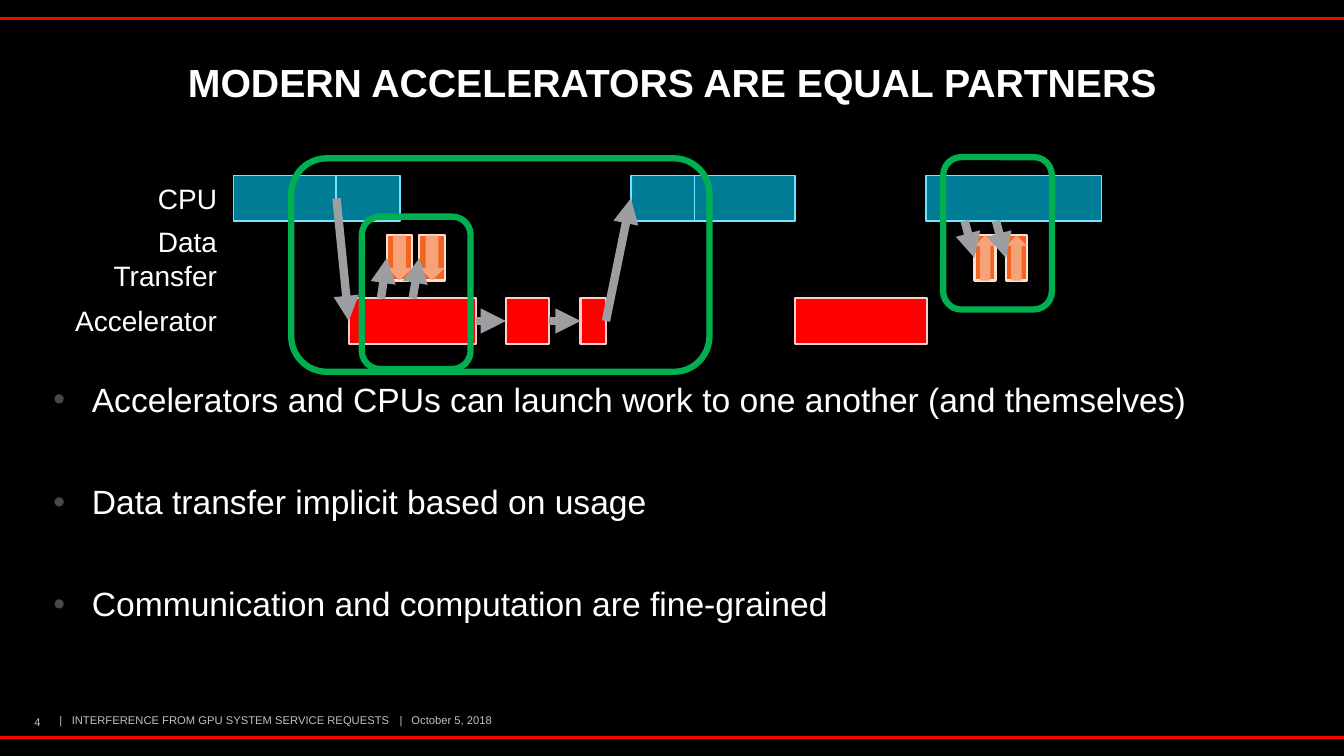
"""Builds a slide on accelerators as equal partners, with a timeline and three points."""
import dataclasses

import lxml.etree
import pptx
import pptx.dml.color
import pptx.enum.shapes
import pptx.enum.text
import pptx.oxml.ns
import pptx.util

Cm, Pt = pptx.util.Cm, pptx.util.Pt
Shape = pptx.enum.shapes.MSO_SHAPE
Align = pptx.enum.text.PP_ALIGN
Anchor = pptx.enum.text.MSO_ANCHOR


@dataclasses.dataclass(frozen=True)
class Theme:
    font: str = "Arial"
    background: str = "000000"
    text: str = "FFFFFF"
    muted: str = "C1C1C1"
    bullet: str = "484848"
    rule: str = "FF0000"
    cpu: tuple = ("007B96", "6FE5FF", 1)
    transfer: tuple = ("F16521", "FCE0D3", 1.5)
    accelerator: tuple = ("FF0000", "FFCCCC", 1.5)
    transfer_arrow: str = "F7A37A"
    launch: str = "9C9EA2"
    highlight: str = "00B050"
    title_size: int = 28
    body_size: int = 24
    label_size: int = 20
    footer_size: int = 8


THEME = Theme()
SLIDE_WIDTH, SLIDE_HEIGHT = 33.87, 19.05
TITLE = "MODERN ACCELERATORS ARE EQUAL PARTNERS"
POINTS = [
    "Accelerators and CPUs can launch work to one another (and themselves)",
    "Data transfer implicit based on usage",
    "Communication and computation are fine-grained",
]
FOOTER = "|\tINTERFERENCE FROM GPU SYSTEM SERVICE REQUESTS\t|\tOctober 5, 2018"
FOOTER_TABS = [0.31, 8.57, 8.87]
PAGE_NUMBER = "4"
RULE_TOPS = [0.46, 18.59]

BLOCK_HEIGHT = 1.14
ROW_TOPS = {"cpu": 4.43, "transfer": 5.93, "accelerator": 7.52}
LABEL_RIGHT = 5.72
LABELS = [
    ("CPU", 4.44, 2.57, 1.14),
    ("Data Transfer", 5.54, 3.73, 1.9),
    ("Accelerator", 7.52, 4.17, 1.14),
]
BLOCKS = {
    "accelerator": [(8.79, 3.2), (12.75, 1.09), (14.63, 0.64), (20.04, 3.33)],
    "transfer": [(9.75, 0.64), (10.57, 0.64), (24.56, 0.53), (25.35, 0.53)],
    "cpu": [(5.89, 2.57), (8.48, 1.6), (15.9, 1.6), (17.5, 2.54), (23.34, 4.42)],
}
TRANSFER_ROTATIONS = [0, 0, 180, 180]
LAUNCHES = [
    (("cpu", 1, 1), ("accelerator", 0, 1)),
    (("accelerator", 0, 3), ("accelerator", 1, 1)),
    (("accelerator", 1, 3), ("accelerator", 2, 1)),
    (("accelerator", 2, 3), ("cpu", 2, 1)),
]
ACCELERATOR_TOP = ROW_TOPS["accelerator"]
CPU_BOTTOM = ROW_TOPS["cpu"] + BLOCK_HEIGHT
TRANSFER_STARTS = [
    (9.6, ACCELERATOR_TOP), (10.4, ACCELERATOR_TOP), (24.31, CPU_BOTTOM), (25.1, CPU_BOTTOM),
]
HIGHLIGHTS = [(7.34, 3.99, 10.54, 5.38), (9.12, 5.46, 2.74, 3.84), (23.77, 3.96, 2.74, 3.84)]


def color(value):
    return pptx.dml.color.RGBColor.from_string(value)


def add_element(parent, tag, **attributes):
    return lxml.etree.SubElement(parent, pptx.oxml.ns.qn(tag), attributes)


def style_text(para, size, tint, align=Align.LEFT, bold=False):
    para.alignment = align
    for span in para.runs:
        span.font.name = THEME.font
        span.font.size = Pt(size)
        span.font.bold = bold
        span.font.color.rgb = color(tint)


def add_text(page, text, place, size, tint, align=Align.LEFT, anchor=Anchor.TOP):
    frame = page.shapes.add_textbox(*map(Cm, place)).text_frame
    frame.word_wrap = True
    frame.vertical_anchor = anchor
    frame.text = text
    style_text(frame.paragraphs[0], size, tint, align)
    return frame


def add_shape(page, kind, place, fill=None, line=None, width=0):
    shape = page.shapes.add_shape(kind, *map(Cm, place))
    shape.shadow.inherit = False
    if fill:
        shape.fill.solid()
        shape.fill.fore_color.rgb = color(fill)
    else:
        shape.fill.background()
    if line:
        shape.line.color.rgb = color(line)
        shape.line.width = Pt(width)
    else:
        shape.line.fill.background()
    return shape


def add_line(page, start, end, tint, width, arrow=False):
    line = page.shapes.add_connector(
        pptx.enum.shapes.MSO_CONNECTOR.STRAIGHT, *map(Cm, (*start, *end)))
    line.line.color.rgb = color(tint)
    line.line.width = Pt(width)
    if arrow:
        add_element(line.line._get_or_add_ln(), "a:tailEnd", type="triangle")
    add_element(line._element.spPr, "a:effectLst")
    return line


def place_placeholder(holder, left, top, width, height):
    holder.left, holder.top = Cm(left), Cm(top)
    holder.width, holder.height = Cm(width), Cm(height)
    holder.text_frame.auto_size = pptx.enum.text.MSO_AUTO_SIZE.NONE
    return holder.text_frame


def fill_title(page):
    frame = place_placeholder(page.shapes.title, 1.09, 1.24, 31.7, 1.78)
    frame.vertical_anchor = Anchor.MIDDLE
    frame.text = TITLE
    frame.paragraphs[0].line_spacing = 0.9
    style_text(frame.paragraphs[0], THEME.title_size, THEME.text, Align.CENTER, bold=True)


def fill_points(page):
    frame = place_placeholder(page.placeholders[1], 1.09, 9.53, 30.76, 8.38)
    frame.text = "\n".join(POINTS)
    for index, para in enumerate(frame.paragraphs):
        properties = para._p.get_or_add_pPr()
        properties.set("marL", str(Cm(0.97)))
        properties.set("indent", str(Cm(-0.97)))
        add_element(add_element(properties, "a:buClr"), "a:srgbClr", val=THEME.bullet)
        add_element(properties, "a:buChar", char="•")
        para.line_spacing = 0.9
        para.space_before = Pt(47 if index else 0)
        style_text(para, THEME.body_size, THEME.text)


def add_frame(page):
    for top in RULE_TOPS:
        add_line(page, (0, top), (SLIDE_WIDTH, top), THEME.rule, 2)
    footer = add_text(page, FOOTER, (1.5, 17.86, 11.5, 0.58),
                      THEME.footer_size, THEME.muted, anchor=Anchor.MIDDLE)
    footer.margin_left = footer.margin_right = 0
    tabs = add_element(footer.paragraphs[0]._p.get_or_add_pPr(), "a:tabLst")
    for position in FOOTER_TABS:
        add_element(tabs, "a:tab", pos=str(Cm(position)), algn="l")
    add_text(page, PAGE_NUMBER, (0.46, 17.91, 0.97, 0.56),
             THEME.footer_size, THEME.muted, Align.CENTER, Anchor.MIDDLE)


def add_timeline(page):
    for label, top, width, height in LABELS:
        add_text(page, label, (LABEL_RIGHT - width, top, width, height),
                 THEME.label_size, THEME.text, Align.RIGHT)
    blocks = {}
    for row, spans in BLOCKS.items():
        for index, (left, width) in enumerate(spans):
            place = (left, ROW_TOPS[row], width, BLOCK_HEIGHT)
            blocks[row, index] = add_shape(page, Shape.RECTANGLE, place, *getattr(THEME, row))
            if row == "transfer":
                arrow = add_shape(page, Shape.DOWN_ARROW, place, THEME.transfer_arrow)
                arrow.rotation = TRANSFER_ROTATIONS[index]
    for (*source, exit_side), (*target, entry_side) in LAUNCHES:
        line = add_line(page, (0, 0), (0, 0), THEME.launch, 6, arrow=True)
        line.begin_connect(blocks[tuple(source)], exit_side)
        line.end_connect(blocks[tuple(target)], entry_side)
    for index, start in enumerate(TRANSFER_STARTS):
        line = add_line(page, start, start, THEME.launch, 6, arrow=True)
        line.end_connect(blocks["transfer", index], 1)
    for place in HIGHLIGHTS:
        add_shape(page, Shape.ROUNDED_RECTANGLE, place, line=THEME.highlight, width=4.5)


def main():
    deck = pptx.Presentation()
    deck.slide_width, deck.slide_height = Cm(SLIDE_WIDTH), Cm(SLIDE_HEIGHT)
    page = deck.slides.add_slide(deck.slide_layouts[1])
    page.background.fill.solid()
    page.background.fill.fore_color.rgb = color(THEME.background)
    fill_title(page)
    fill_points(page)
    add_frame(page)
    add_timeline(page)
    deck.save("out.pptx")


if __name__ == "__main__":
    main()
